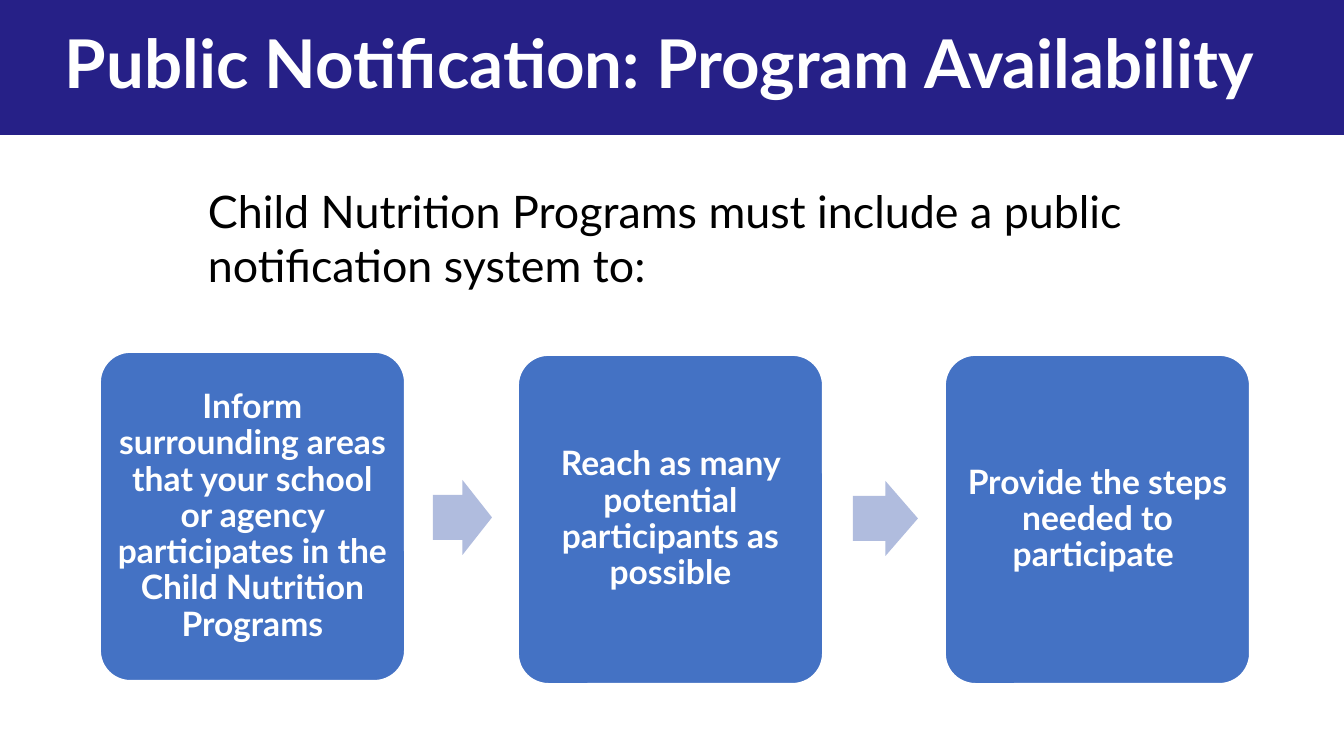
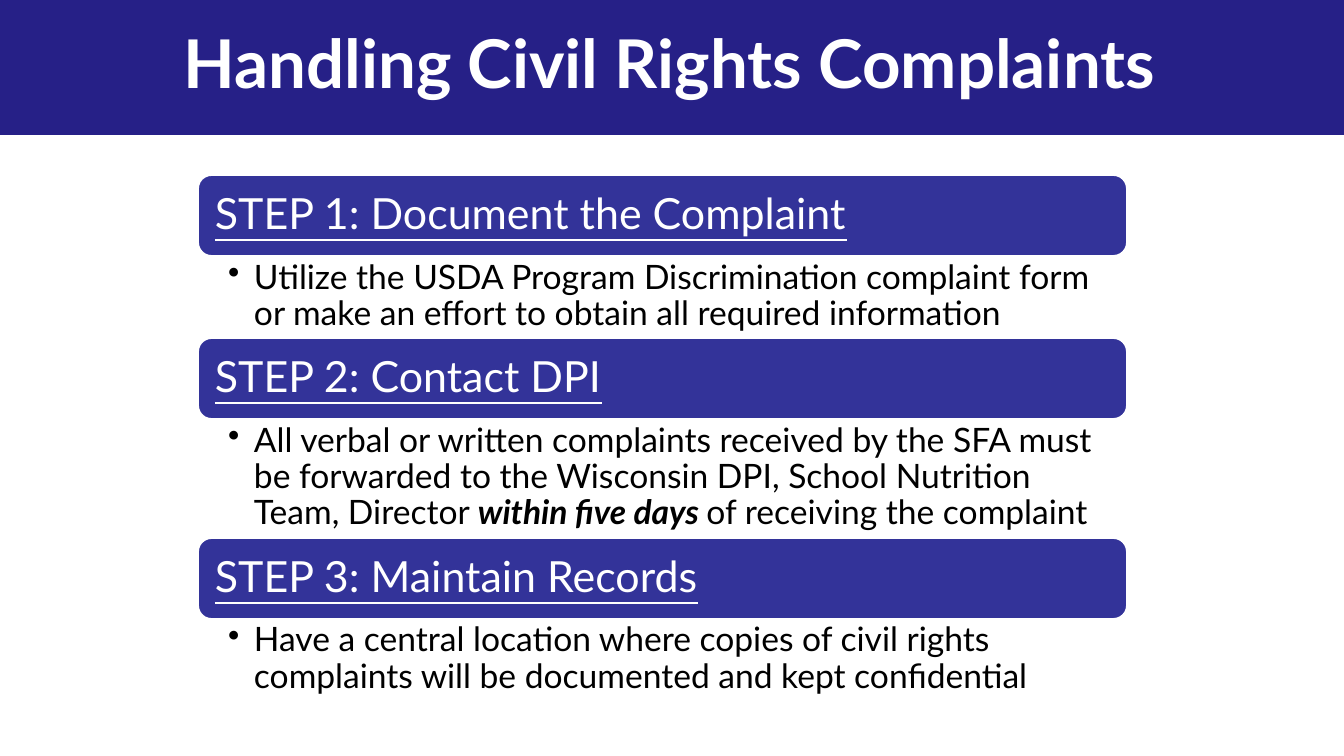
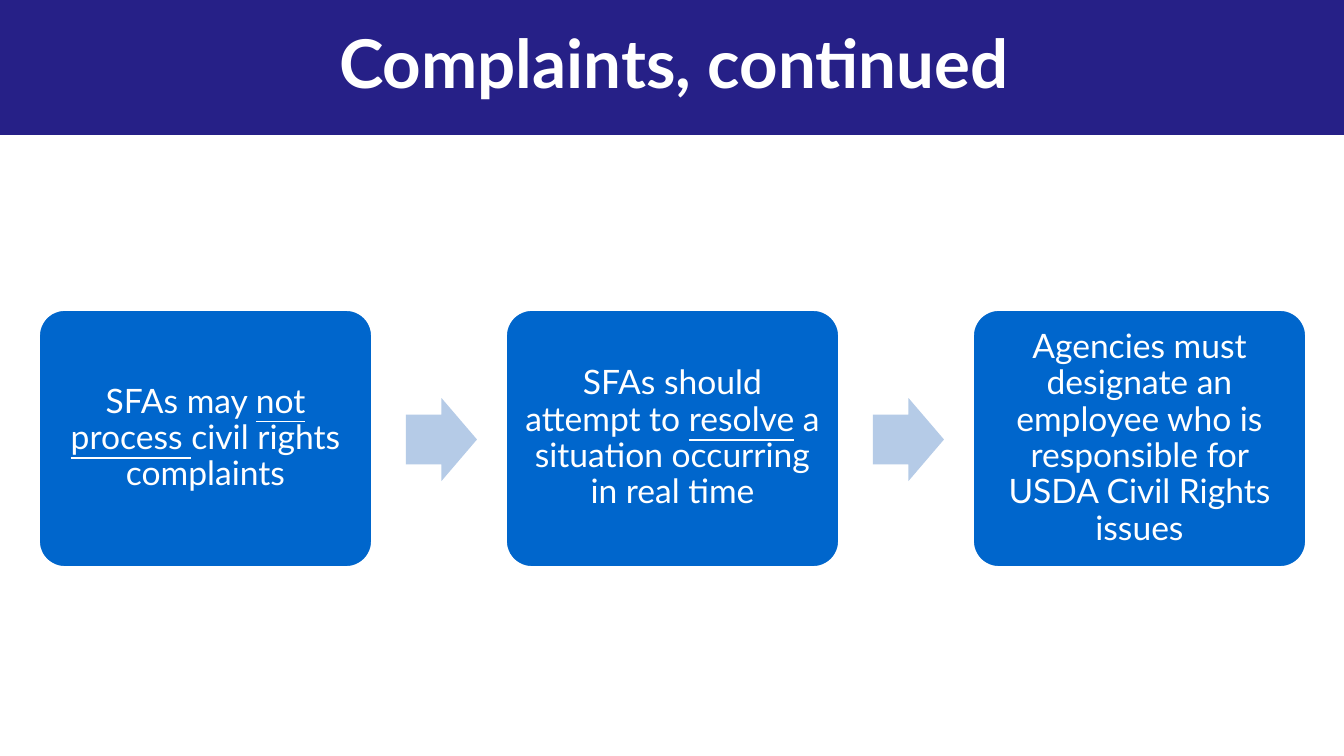
from lxml import etree
from pptx import Presentation
from pptx import util as u
from pptx.dml.color import RGBColor
from pptx.enum import shapes, text
from pptx.oxml.ns import qn

PX = 914400 / 134.4
FONT = "Lato"
COLOURS = {
    "band": "262087", "white": "FFFFFF", "black": "000000",
    "box": "4472C4", "arrow": "B0BCDE", "step": "333399",
    "complaint": "0066CC", "complaint_arrow": "B5CBE7",
}


def add_item(slide, kind, box, fill=None, outline=False):
    """Add a preset shape, or a text box if kind is None; box is in px."""
    place = [u.Emu(round(length * PX)) for length in box]
    if kind is None:
        return slide.shapes.add_textbox(*place)
    shape = slide.shapes.add_shape(kind, *place)
    shape.shadow.inherit = False
    shape.fill.solid()
    shape.fill.fore_color.rgb = RGBColor.from_string(COLOURS[fill])
    if outline:
        shape.line.color.rgb = RGBColor.from_string(COLOURS["white"])
        shape.line.width = u.Pt(1)
    else:
        shape.line.fill.background()
    return shape


def write(shape, pieces, size, colour="white", align="CENTER", anchor="MIDDLE",
          margins=(13, 7, 13, 7), spacing=0.9, bold=False, emphasis=(), bullet=False):
    """Fill a shape with one paragraph; every second piece takes the emphasis."""
    frame = shape.text_frame
    frame.word_wrap = True
    frame.vertical_anchor = text.MSO_ANCHOR[anchor]
    (frame.margin_left, frame.margin_top,
     frame.margin_right, frame.margin_bottom) = [u.Emu(round(m * PX)) for m in margins]
    paragraph = frame.paragraphs[0]
    paragraph.alignment = text.PP_ALIGN[align]
    paragraph.line_spacing = spacing
    if bullet:
        paragraph.level = 1
        properties = paragraph._p.get_or_add_pPr()
        properties.set("marL", str(round(26 * PX)))
        properties.set("indent", str(round(-26 * PX)))
        etree.SubElement(properties, qn("a:buChar")).set("char", "•")
    for index, piece in enumerate(pieces):
        run = paragraph.add_run()
        run.text = piece
        run.font.name = FONT
        run.font.size = u.Pt(size)
        run.font.bold = bold
        run.font.color.rgb = RGBColor.from_string(COLOURS[colour])
        if index % 2:
            for style in emphasis:
                setattr(run.font, style, True)


presentation = Presentation()
presentation.slide_width = u.Emu(round(1344 * PX))
presentation.slide_height = u.Emu(round(756 * PX))

titles = [
    ("Public Notification: Program Availability ", 32, 1270),
    ("Handling Civil Rights Complaints", 90, 1159),
    ("Complaints, continued", 39, 1270),
]
slides = []
for title, left, width in titles:
    slide = presentation.slides.add_slide(presentation.slide_layouts[6])
    add_item(slide, shapes.MSO_SHAPE.RECTANGLE, (0, 0, 1344, 135), "band")
    write(add_item(slide, None, (left, 0, width, 134)), [title], 36, bold=True)
    slides.append(slide)
notification, handling, continued = slides

# Two rows of three boxes with arrows between them
flows = [
    (notification, "box", "arrow", True,
     [(100, 352, 305, 329), (518, 355, 305, 329), (945, 355, 305, 329)],
     [(433, 480, 59, 75), (853, 481, 65, 75)],
     [["Inform surrounding areas that your school or agency participates in the "
       "Child Nutrition Programs"],
      ["Reach as many potential participants as possible"],
      ["Provide the steps needed to participate "]]),
    (continued, "complaint", "complaint_arrow", False,
     [(39 + 467 * column, 310, 333, 257) for column in range(3)],
     [(406 + 467 * column, 398, 71, 83) for column in range(2)],
     [["SFAs may ", "not process ", "civil rights complaints"],
      ["SFAs should attempt to ", "resolve", " a situation occurring in real time"],
      ["Agencies must designate an employee who is responsible for USDA Civil "
       "Rights issues"]]),
]
for slide, box_fill, arrow_fill, bold, boxes, arrows, messages in flows:
    for box, message in zip(boxes, messages):
        shape = add_item(slide, shapes.MSO_SHAPE.ROUNDED_RECTANGLE, box, box_fill, True)
        shape.adjustments[0] = 0.1
        write(shape, message, 18, margins=(9, 9, 9, 9), bold=bold, emphasis=["underline"])
    for box in arrows:
        arrow = add_item(slide, shapes.MSO_SHAPE.RIGHT_ARROW, box, arrow_fill)
        arrow.adjustments[0] = 0.6
        arrow.adjustments[1] = 0.5

intro = add_item(notification, None, (195, 177, 946, 122))
write(intro, ["Child Nutrition Programs must include a public notification system to:"],
      24, "black", "LEFT", "TOP", spacing=1)

# Step bars, each followed by its bullet
steps = [
    ("STEP 1: Document the Complaint", 82,
     ["Utilize the USDA Program Discrimination complaint form or make an effort to "
      "obtain all required information"]),
    ("STEP 2: Contact DPI", 119,
     ["All verbal or written complaints received by the SFA must be forwarded to the "
      "Wisconsin DPI, School Nutrition Team, Director ",
      "within five days ", "of receiving the complaint"]),
    ("STEP 3: Maintain Records", 82,
     ["Have a central location where copies of civil rights complaints will be "
      "documented and kept confidential"]),
]
top, bar_height = 175, 81
for heading, detail_height, detail in steps:
    bar = add_item(handling, shapes.MSO_SHAPE.ROUNDED_RECTANGLE,
                   (198, top, 929, bar_height), "step", True)
    write(bar, [heading], 23, align="LEFT", margins=(13, 13, 13, 13))
    bar.text_frame.paragraphs[0].runs[0].font.underline = True
    top += bar_height
    write(add_item(handling, None, (198, top, 929, detail_height)), detail, 18, "black",
          "LEFT", "TOP", (30, 4, 24, 4), emphasis=["bold", "italic"], bullet=True)
    top += detail_height

presentation.save("out.pptx")
